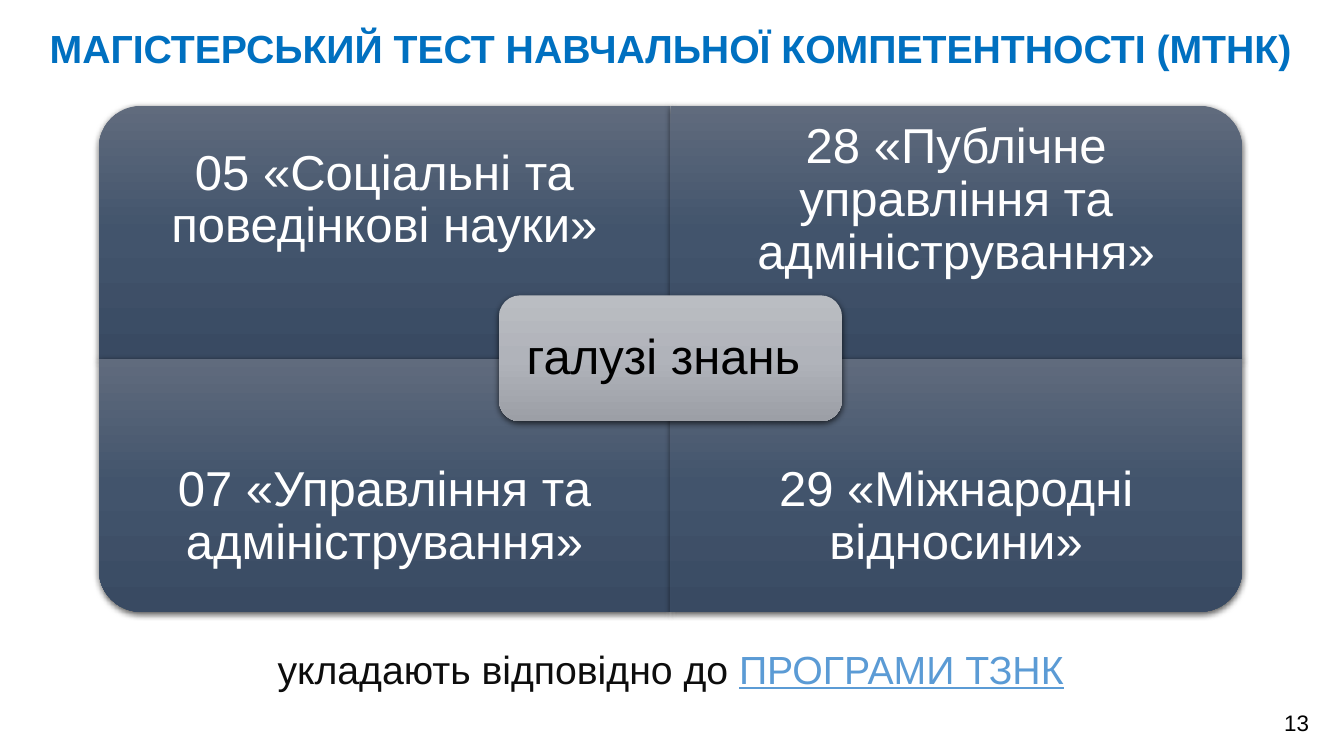
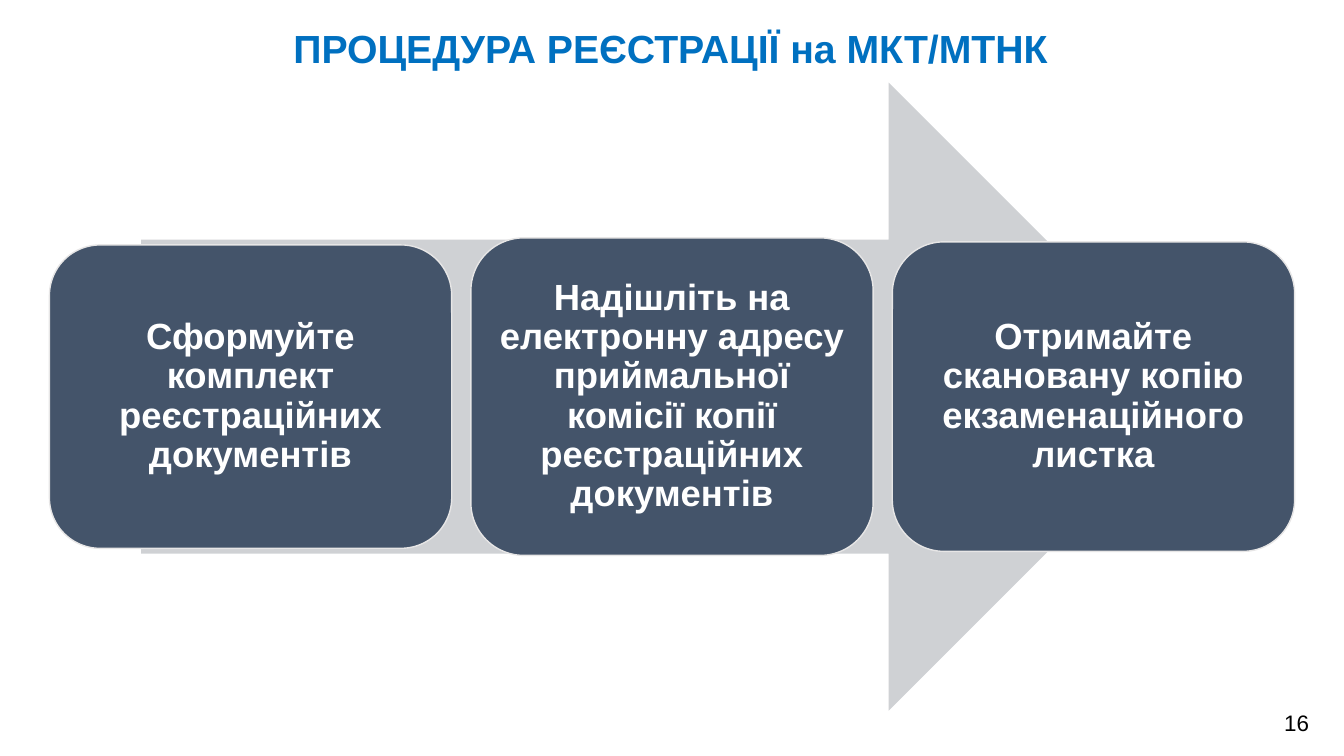
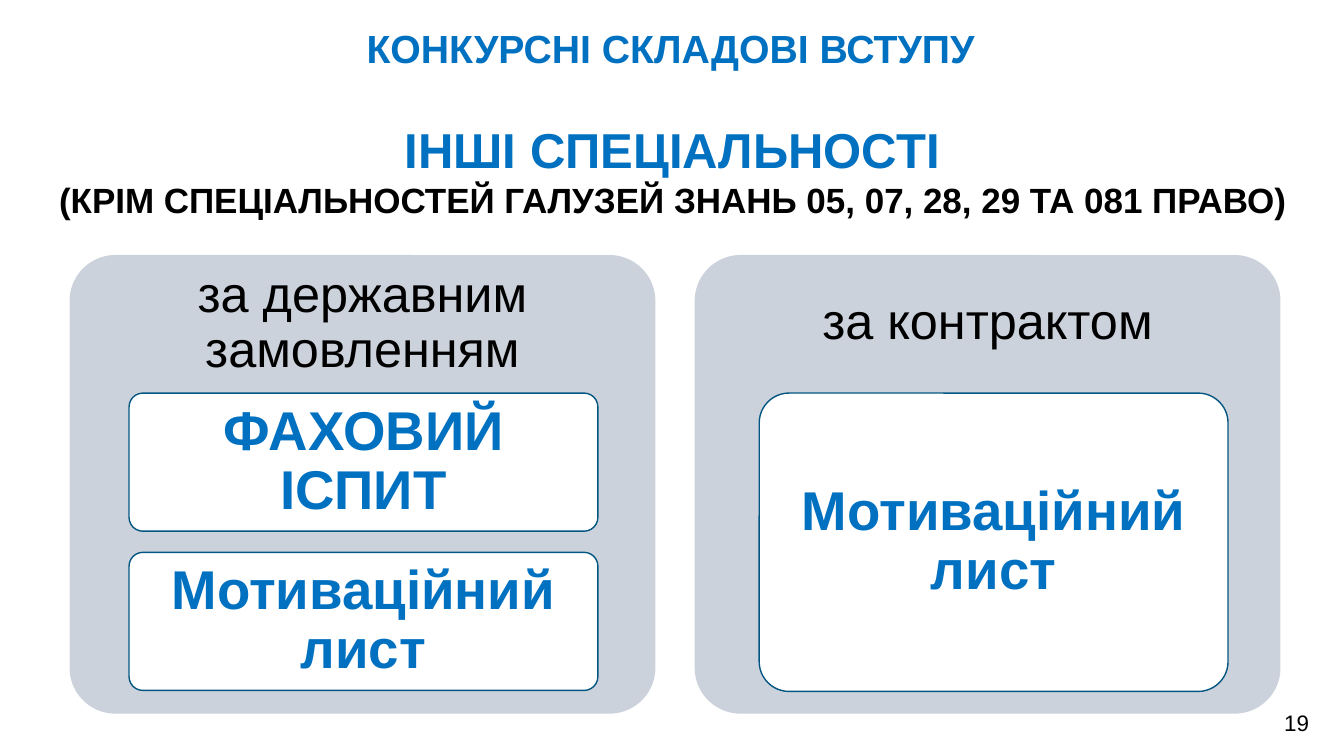
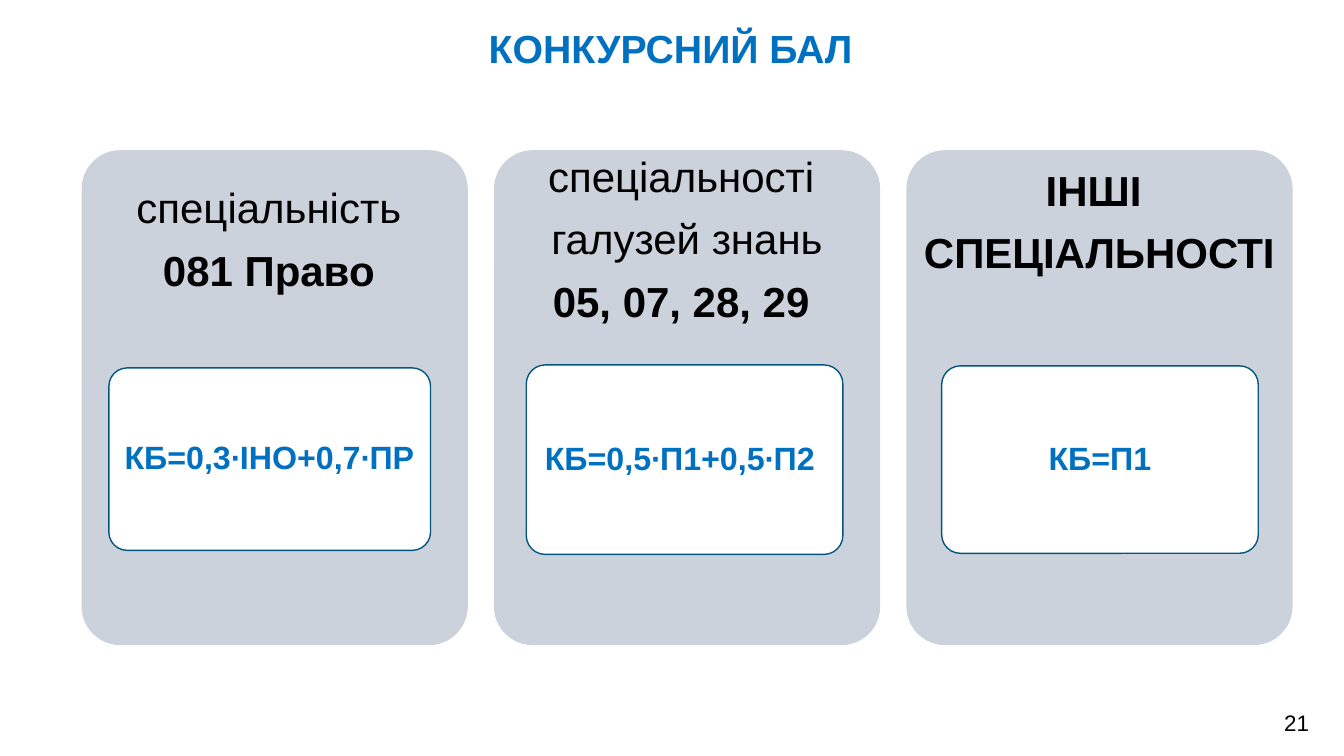
from dataclasses import dataclass

from pptx import Presentation
from pptx.dml.color import RGBColor
from pptx.enum.shapes import MSO_SHAPE as Preset
from pptx.enum.text import MSO_ANCHOR as Anchor, PP_ALIGN as Align
from pptx.oxml import parse_xml
from pptx.oxml.ns import nsdecls, qn
from pptx.shapes.autoshape import Shape
from pptx.slide import Slide
from pptx.text.text import TextFrame
from pptx.util import Inches, Pt

# Shared style
FONT = "Arial"
BLUE = RGBColor(0x00, 0x70, 0xC0)
LINK_BLUE = RGBColor(0x5B, 0x9B, 0xD5)
CARD_EDGE = RGBColor(0x03, 0x56, 0x81)
SLATE = RGBColor(0x44, 0x54, 0x6A)
STEP_EDGE = RGBColor(0xE7, 0xE6, 0xE6)
ARROW_GREY = RGBColor(0xCF, 0xD1, 0xD4)
PANEL_GREY = RGBColor(0xCC, 0xD2, 0xDB)
WHITE = RGBColor(0xFF, 0xFF, 0xFF)
BLACK = RGBColor(0x00, 0x00, 0x00)
NEAR_BLACK = RGBColor(0x0D, 0x0D, 0x0D)
SLATE_SHADES = (RGBColor(0x60, 0x6B, 0x7D), RGBColor(0x42, 0x54, 0x6C),
                RGBColor(0x39, 0x4A, 0x62))
GREY_SHADES = (RGBColor(0xBA, 0xBD, 0xC2), RGBColor(0xB0, 0xB3, 0xBA),
               RGBColor(0x9C, 0x9F, 0xA6))
TIGHT = 0.9
CARD_ROUNDING = 0.1


@dataclass(frozen=True)
class Box:
    """A rectangle in inches."""
    left: float
    top: float
    width: float
    height: float


@dataclass(frozen=True)
class Quadrant:
    text: str
    column: int
    row: int
    rotation: int


@dataclass(frozen=True)
class Step:
    text: str
    height: float


@dataclass(frozen=True)
class Card:
    text: str
    box: Box


@dataclass(frozen=True)
class Column:
    heading: str
    cards: tuple[Card, ...]


@dataclass(frozen=True)
class Score:
    heading: tuple[tuple[str, bool], ...]  # line and whether it is bold
    drop: float
    card: Card


# Text
def add_text(frame: TextFrame, text: str, *, size: float, color: RGBColor,
             bold: bool = False, underline: bool = False, spacing: float = 1.0,
             before: float = 0, same_line: bool = False) -> None:
    paragraph = frame.paragraphs[-1]
    if paragraph.runs and not same_line:
        paragraph = frame.add_paragraph()
        paragraph.space_before = Pt(before)
    paragraph.alignment = Align.CENTER
    paragraph.line_spacing = spacing
    run = paragraph.add_run()
    run.text = text
    font = run.font
    font.name, font.size, font.bold = FONT, Pt(size), bold
    font.underline = underline
    font.color.rgb = color


def set_frame(frame: TextFrame, inset_x: float, inset_y: float, anchor: Anchor) -> None:
    frame.word_wrap = True
    frame.vertical_anchor = anchor
    frame.margin_left = frame.margin_right = Inches(inset_x)
    frame.margin_top = frame.margin_bottom = Inches(inset_y)


def add_label(slide: Slide, box: Box, inset: float | None = None) -> TextFrame:
    """An empty text box: top-anchored, or centred when an inset is given."""
    label = slide.shapes.add_textbox(Inches(box.left), Inches(box.top),
                                     Inches(box.width), Inches(box.height))
    if inset is None:
        set_frame(label.text_frame, 0.1, 0.05, Anchor.TOP)
    else:
        set_frame(label.text_frame, inset, inset, Anchor.MIDDLE)
    return label.text_frame


# Shapes
def add_block(slide: Slide, preset: Preset, box: Box, *, fill: RGBColor | None = None,
              line: RGBColor | None = None, rounding: float | None = None,
              inset: tuple[float, float] = (0.11, 0.11)) -> Shape:
    block = slide.shapes.add_shape(preset, Inches(box.left), Inches(box.top),
                                   Inches(box.width), Inches(box.height))
    block.shadow.inherit = False
    if fill is not None:
        block.fill.solid()
        block.fill.fore_color.rgb = fill
    if line is None:
        block.line.fill.background()
    else:
        block.line.color.rgb = line
        block.line.width = Pt(1)
    if rounding is not None:
        block.adjustments[0] = rounding
    set_frame(block.text_frame, *inset, Anchor.MIDDLE)
    return block


def shade(block: Shape, shades: tuple[RGBColor, ...]) -> None:
    """Vertical gradient and soft shadow that stay upright when the block turns."""
    block.fill.gradient()
    block.fill.gradient_angle = 270
    properties = block.element.spPr
    gradient = properties.find(qn("a:gradFill"))
    gradient.set("rotWithShape", "0")
    stops = "".join(f'<a:gs pos="{i * 50000}"><a:srgbClr val="{color}"/></a:gs>'
                    for i, color in enumerate(shades))
    gradient.replace(gradient.find(qn("a:gsLst")),
                     parse_xml(f'<a:gsLst {nsdecls("a")}>{stops}</a:gsLst>'))
    properties.find(qn("a:effectLst")).append(parse_xml(
        f'<a:outerShdw {nsdecls("a")} blurRad="{Pt(4.5)}" dist="{Pt(1.5)}" '
        'dir="5400000" algn="ctr" rotWithShape="0">'
        '<a:srgbClr val="000000"><a:alpha val="63000"/></a:srgbClr></a:outerShdw>'))


def add_panel(slide: Slide, box: Box) -> None:
    add_block(slide, Preset.ROUNDED_RECTANGLE, box, fill=PANEL_GREY,
              rounding=CARD_ROUNDING)


def add_card(slide: Slide, card: Card, size: float, inset: tuple[float, float]) -> None:
    block = add_block(slide, Preset.ROUNDED_RECTANGLE, card.box, fill=WHITE,
                      line=CARD_EDGE, rounding=CARD_ROUNDING, inset=inset)
    add_text(block.text_frame, card.text, size=size, color=BLUE, bold=True, spacing=TIGHT)


def start_slide(deck: Presentation, title: str, number: int) -> Slide:
    slide = deck.slides.add_slide(deck.slide_layouts[6])
    add_text(add_label(slide, Box(0.19, 0.24, 12.92, 1.05)), title,
             size=28, color=BLUE, bold=True, spacing=TIGHT)
    add_text(add_label(slide, Box(12.54, 6.99, 0.64, 0.37)), str(number),
             size=16, color=BLACK)
    return slide


# Fields of knowledge
QUADRANTS = (
    Quadrant("05 «Соціальні та поведінкові науки»", 0, 0, 270),
    Quadrant("28 «Публічне управління та адміністрування»", 1, 0, 0),
    Quadrant("07 «Управління та адміністрування»", 0, 1, 180),
    Quadrant("29 «Міжнародні відносини»", 1, 1, 90),
)


def build_fields(deck: Presentation) -> None:
    slide = start_slide(deck, "МАГІСТЕРСЬКИЙ ТЕСТ НАВЧАЛЬНОЇ КОМПЕТЕНТНОСТІ\u00a0(МТНК)", 13)
    left, top, width, height, text_height = 0.98, 1.05, 5.67, 2.51, 1.88
    for quadrant in QUADRANTS:
        x, y = left + quadrant.column * width, top + quadrant.row * height
        box = Box(x, y, width, height)
        if quadrant.rotation % 180:  # a quarter turn swaps the sides
            shift = (width - height) / 2
            box = Box(x + shift, y - shift, height, width)
        block = add_block(slide, Preset.ROUND_1_RECTANGLE, box)
        block.rotation = quadrant.rotation
        shade(block, SLATE_SHADES)
        text_top = y + quadrant.row * (height - text_height)
        add_text(add_label(slide, Box(x, text_top, width, text_height), 0.27),
                 quadrant.text, size=35, color=WHITE, spacing=TIGHT)

    centre = add_block(slide, Preset.ROUNDED_RECTANGLE, Box(4.95, 2.93, 3.4, 1.25),
                       inset=(0.15, 0.15))
    shade(centre, GREY_SHADES)
    add_text(centre.text_frame, "галузі знань ", size=35, color=BLACK, spacing=TIGHT)

    basis = add_label(slide, Box(0.19, 6.35, 12.92, 0.57))
    add_text(basis, "укладають відповідно до\u00a0", size=28, color=NEAR_BLACK)
    add_text(basis, "ПРОГРАМИ ТЗНК", size=28, color=LINK_BLUE, underline=True,
             same_line=True)


# Registration procedure
STEPS = (
    Step("Сформуйте комплект реєстраційних документів", 3.01),
    Step("Надішліть на електронну адресу приймальної комісії копії "
         "реєстраційних документів", 3.15),
    Step("Отримайте скановану копію екзаменаційного листка", 3.07),
)


def build_procedure(deck: Presentation) -> None:
    slide = start_slide(deck, "ПРОЦЕДУРА РЕЄСТРАЦІЇ на МКТ/МТНК", 16)
    arrow = Box(1.4, 0.82, 10.53, 6.23)
    add_block(slide, Preset.RIGHT_ARROW, arrow, fill=ARROW_GREY)
    middle = arrow.top + arrow.height / 2
    for i, step in enumerate(STEPS):
        box = Box(0.49 + i * 4.18, middle - step.height / 2, 3.99, step.height)
        block = add_block(slide, Preset.ROUNDED_RECTANGLE, box, fill=SLATE, line=STEP_EDGE)
        add_text(block.text_frame, step.text, size=26, color=WHITE, bold=True,
                 spacing=TIGHT)


# Admission components
COLUMNS = (
    Column("за державним замовленням", (
        Card("ФАХОВИЙ ІСПИТ", Box(1.28, 3.9, 4.65, 1.37)),
        Card("Мотиваційний лист", Box(1.28, 5.48, 4.65, 1.37)))),
    Column("за контрактом", (
        Card("Мотиваційний лист", Box(7.53, 3.9, 4.65, 2.96)),)),
)


def build_components(deck: Presentation) -> None:
    slide = start_slide(deck, "КОНКУРСНІ СКЛАДОВІ ВСТУПУ", 19)
    subtitle = add_label(slide, Box(0.04, 1.06, 13.26, 1.19))
    add_text(subtitle, "ІНШІ СПЕЦІАЛЬНОСТІ", size=35, color=BLUE, bold=True, spacing=1.13)
    add_text(subtitle, "(КРІМ СПЕЦІАЛЬНОСТЕЙ ГАЛУЗЕЙ ЗНАНЬ 05, 07, 28, 29 ТА 081 ПРАВО)",
             size=25, color=BLACK, bold=True)
    for i, column in enumerate(COLUMNS):
        panel = Box(0.69 + i * 6.2, 2.53, 5.81, 4.55)
        add_panel(slide, panel)
        add_text(add_label(slide, Box(panel.left, panel.top, panel.width, 1.36), 0.15),
                 column.heading, size=36, color=BLACK, spacing=TIGHT)
        for card in column.cards:
            add_card(slide, card, 39, (0.11, 0.08))


# Competition score
SCORES = (
    Score((("спеціальність ", False), ("081 Право ", True)), 0.17,
          Card("КБ=0,3∙ІНО+0,7∙ПР ", Box(1.08, 3.65, 3.19, 1.81))),
    Score((("спеціальності ", False), ("галузей знань", False), ("05, 07, 28, 29 ", True)),
          0.17, Card("КБ=0,5∙П1+0,5∙П2 ", Box(5.22, 3.62, 3.14, 1.88))),
    Score((("ІНШІ ", True), ("СПЕЦІАЛЬНОСТІ", True)), 0,
          Card("КБ=П1", Box(9.34, 3.63, 3.14, 1.86))),
)


def build_scores(deck: Presentation) -> None:
    slide = start_slide(deck, "КОНКУРСНИЙ БАЛ", 21)
    for i, score in enumerate(SCORES):
        panel = Box(0.81 + i * 4.09, 1.49, 3.83, 4.91)
        add_panel(slide, panel)
        heading = add_label(
            slide, Box(panel.left, panel.top + score.drop, panel.width, 1.47), 0.07)
        for line, bold in score.heading:
            add_text(heading, line, size=30, color=BLACK, bold=bold, spacing=TIGHT,
                     before=12)
        add_card(slide, score.card, 23, (0.06, 0.05))


def main() -> None:
    deck = Presentation()
    deck.slide_width, deck.slide_height = Inches(13.33), Inches(7.5)
    for build in (build_fields, build_procedure, build_components, build_scores):
        build(deck)
    deck.save("out.pptx")


if __name__ == "__main__":
    main()
